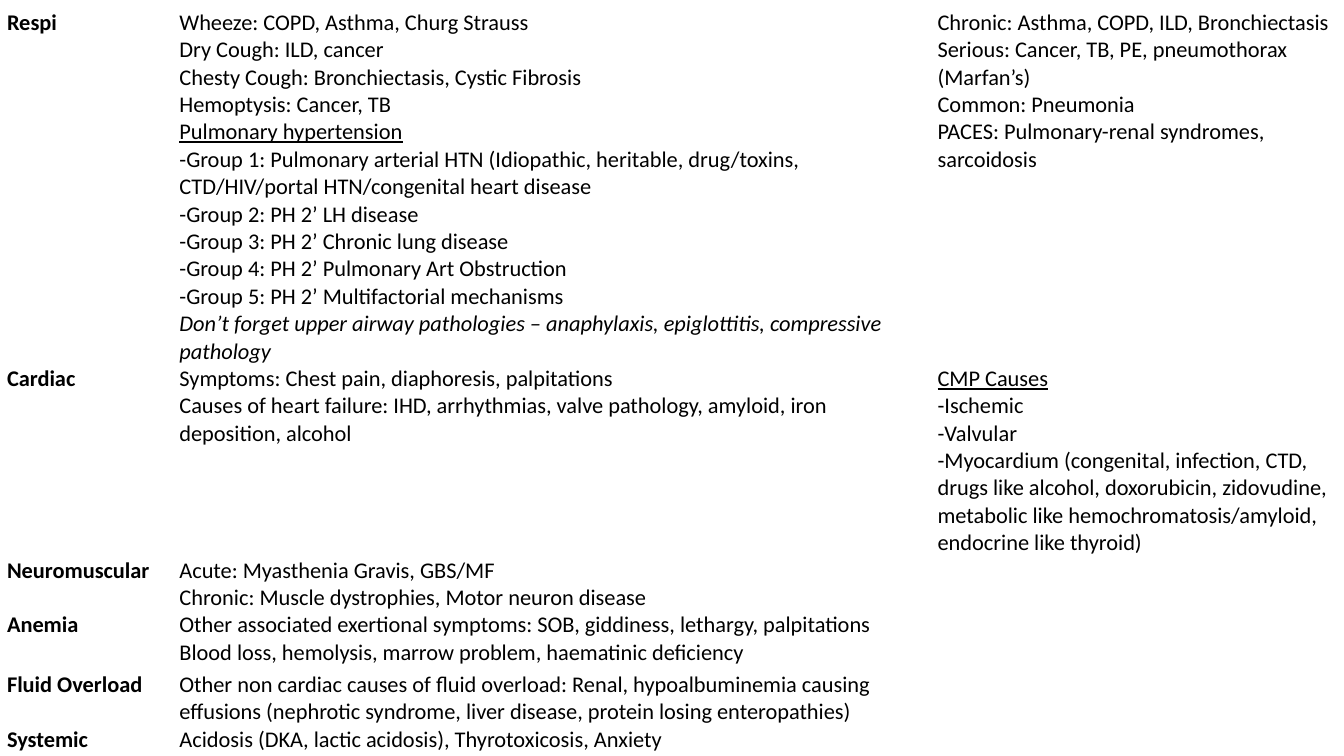
from pptx import Presentation
from pptx.util import Inches, Pt
from pptx.dml.color import RGBColor
from lxml import etree

WIDE, HIGH = 13.33, 7.5
COLS = [1.71, 7.52, 4.1]
ROWS = [2.08, 1.19, 0.3, 0.59, 0.45, 0.15]
INK, PAPER = "000000", "FFFFFF"
NS = "http://schemas.openxmlformats.org/drawingml/2006/main"

# Each row: label, main notes, side notes
ROWS_TEXT = [
    ("Respi",
     ["Wheeze: COPD, Asthma, Churg Strauss",
      "Dry Cough: ILD, cancer",
      "Chesty Cough: Bronchiectasis, Cystic Fibrosis",
      "Hemoptysis: Cancer, TB",
      "Pulmonary hypertension",
      "-Group 1: Pulmonary arterial HTN (Idiopathic, heritable, drug/toxins, "
      "CTD/HIV/portal HTN/congenital heart disease",
      "-Group 2: PH 2’ LH disease",
      "-Group 3: PH 2’ Chronic lung disease",
      "-Group 4: PH 2’ Pulmonary Art Obstruction",
      "-Group 5: PH 2’ Multifactorial mechanisms",
      "Don’t forget upper airway pathologies – anaphylaxis, epiglottitis, "
      "compressive pathology"],
     ["Chronic: Asthma, COPD, ILD, Bronchiectasis",
      "Serious: Cancer, TB, PE, pneumothorax (Marfan’s)",
      "Common: Pneumonia",
      "PACES: Pulmonary-renal syndromes, sarcoidosis"]),
    ("Cardiac",
     ["Symptoms: Chest pain, diaphoresis, palpitations",
      "Causes of heart failure: IHD, arrhythmias, valve pathology, amyloid, "
      "iron deposition, alcohol"],
     ["CMP Causes",
      "-Ischemic",
      "-Valvular",
      "-Myocardium (congenital, infection, CTD, drugs like alcohol, "
      "doxorubicin, zidovudine, metabolic like hemochromatosis/amyloid, "
      "endocrine like thyroid)"]),
    ("Neuromuscular",
     ["Acute: Myasthenia Gravis, GBS/MF",
      "Chronic: Muscle dystrophies, Motor neuron disease"], []),
    ("Anemia",
     ["Other associated exertional symptoms: SOB, giddiness, lethargy, "
      "palpitations",
      "Blood loss, hemolysis, marrow problem, haematinic deficiency"], []),
    ("Fluid Overload",
     ["Other non cardiac causes of fluid overload: Renal, hypoalbuminemia "
      "causing effusions (nephrotic syndrome, liver disease, protein losing "
      "enteropathies)"], []),
    ("Systemic",
     ["Acidosis (DKA, lactic acidosis), Thyrotoxicosis, Anxiety"], []),
]
HEADS = {"Pulmonary hypertension", "CMP Causes"}


def color(code):
    return RGBColor.from_string(code)


def write(para, text, size=16, bold=False, italic=False, under=False):
    para.font.size = Pt(size)
    if not text:
        return
    run = para.add_run()
    run.text = text
    font = run.font
    font.name, font.size = "Calibri", Pt(size)
    font.bold, font.italic, font.underline = bold, italic, under
    font.color.rgb = color(INK)


# Slide
deck = Presentation()
deck.slide_width, deck.slide_height = Inches(WIDE), Inches(HIGH)
slide = deck.slides.add_slide(deck.slide_layouts[6])

# Table grid
frame = slide.shapes.add_table(len(ROWS), len(COLS), 0, Inches(0.09),
                               Inches(WIDE), Inches(sum(ROWS)))
table = frame.table
table.horz_banding = False
for col, width in zip(table.columns, COLS):
    col.width = Inches(width)
for row, height in zip(table.rows, ROWS):
    row.height = Inches(height)

# Cells
for r, (label, main, side) in enumerate(ROWS_TEXT):
    for c, lines in enumerate([[label], main, side]):
        cell = table.cell(r, c)
        cell.margin_left = cell.margin_right = Inches(0.07)
        cell.margin_top = cell.margin_bottom = 0

        # White borders, thicker under the first row; they precede the fill
        props = cell._tc.get_or_add_tcPr()
        for edge in ("lnL", "lnR", "lnT", "lnB"):
            thick = 3 if (r, edge) in ((0, "lnB"), (1, "lnT")) else 1
            line = etree.SubElement(props, f"{{{NS}}}{edge}", w=str(Pt(thick)))
            fill = etree.SubElement(line, f"{{{NS}}}solidFill")
            etree.SubElement(fill, f"{{{NS}}}srgbClr", val=PAPER)
        cell.fill.solid()
        cell.fill.fore_color.rgb = color(PAPER)

        body = cell.text_frame
        for n, text in enumerate(lines or [""]):
            para = body.add_paragraph() if n else body.paragraphs[0]
            write(para, text, bold=c == 0, under=text in HEADS,
                  italic=text.startswith("Don’t"))

deck.save("out.pptx")
